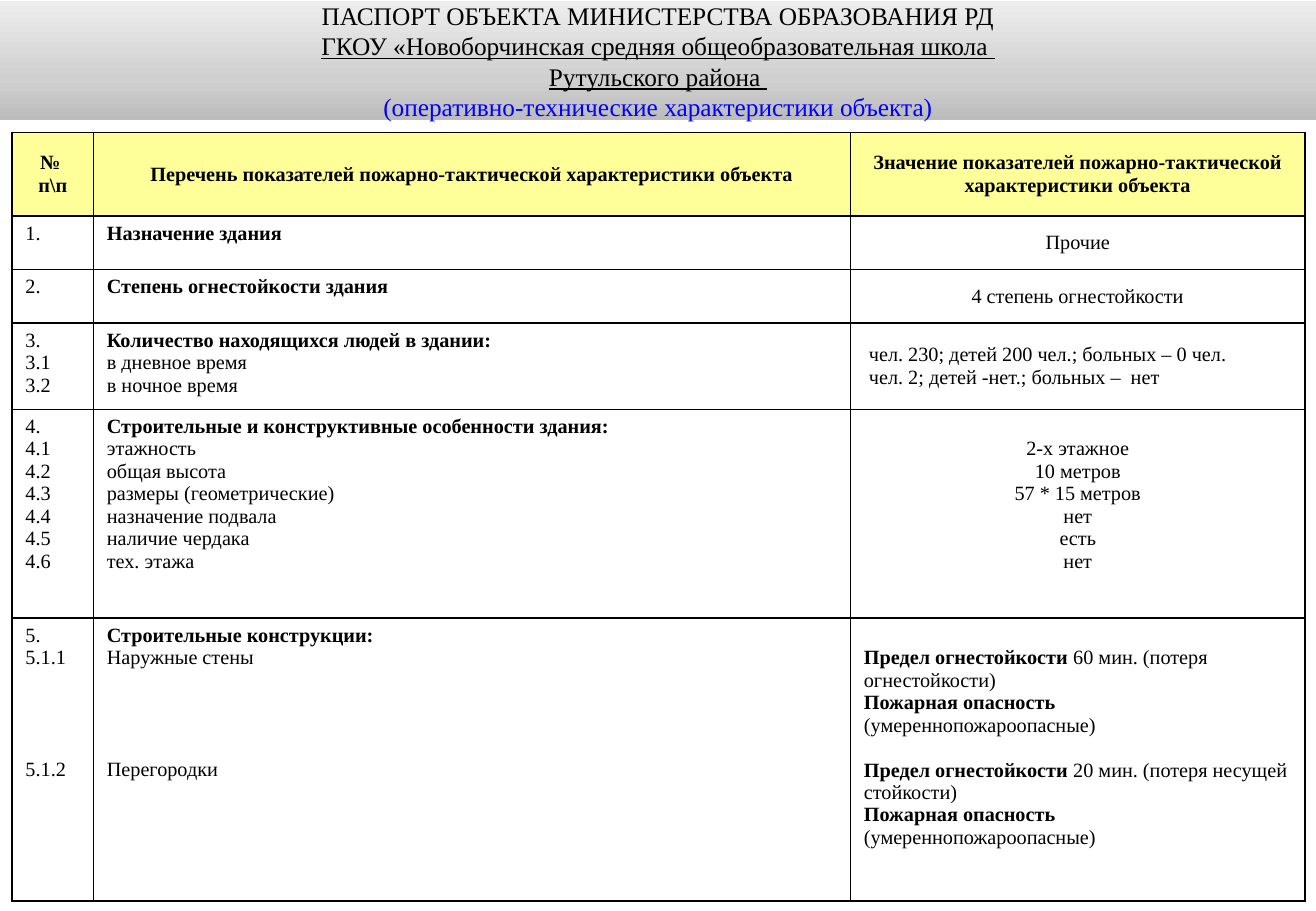
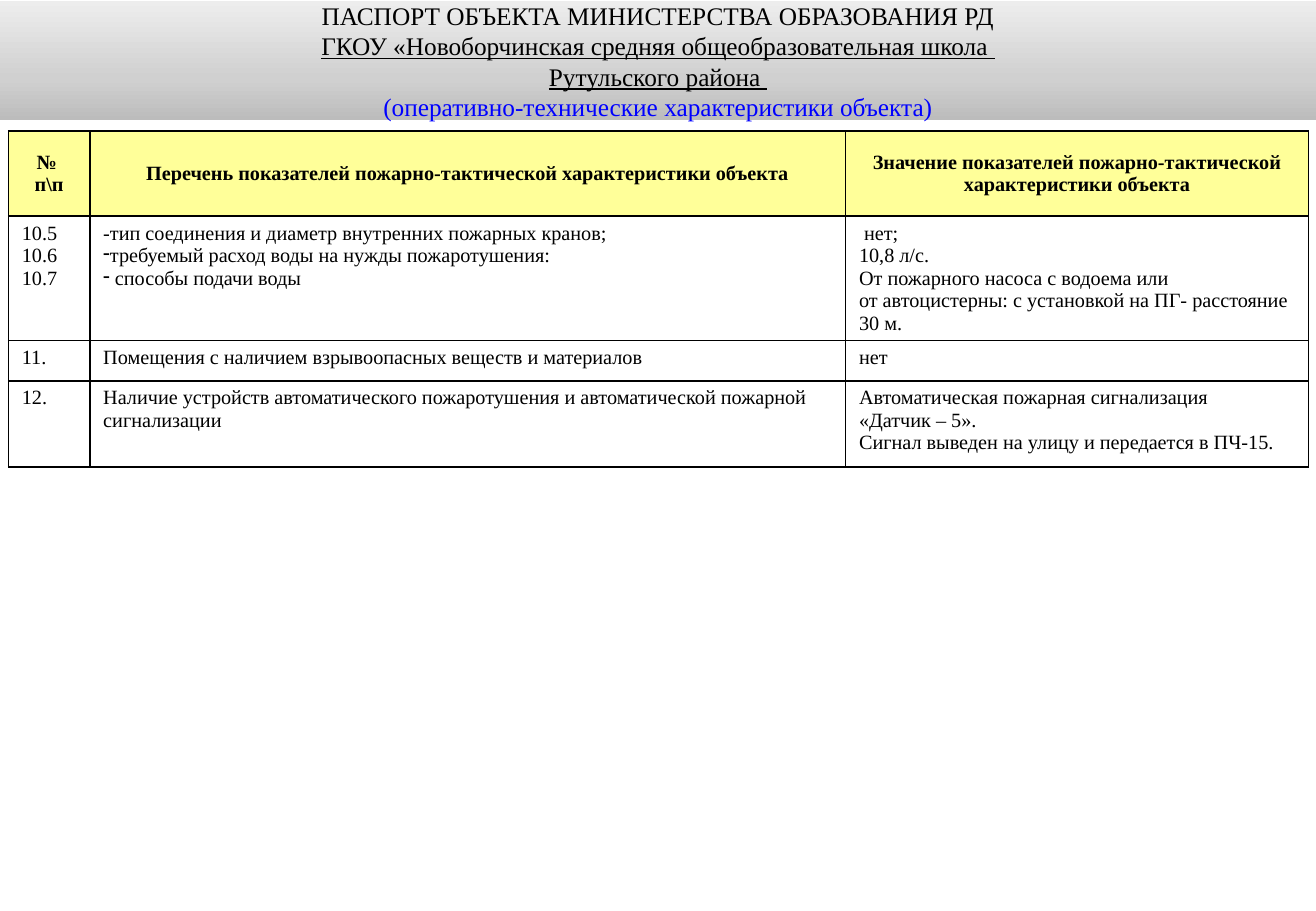
from dataclasses import dataclass
from typing import Any

from lxml import etree
from pptx import Presentation
from pptx import util as u
from pptx.dml import color
from pptx.enum import shapes, text
from pptx.oxml import ns

COLORS = {"text": "000000", "accent": "0000FF", "header": "FFFF99", "body": "FFFFFF", "border": "000000"}
BAND_STOPS = {0: "BCBCBC", 35: "D0D0D0", 100: "EDEDED"}
FONT = "Times New Roman"
TABLE_SIZE, TITLE_SIZE = 12, 15
LINE_HEIGHT = 13.3  # points taken by one line of table text
LEFT, CENTER = text.PP_ALIGN.LEFT, text.PP_ALIGN.CENTER
TOP, MIDDLE = text.MSO_ANCHOR.TOP, text.MSO_ANCHOR.MIDDLE
CELL_MARGINS = {"margin_left": u.Inches(0.11), "margin_right": u.Inches(0.11),
                "margin_top": u.Inches(0.05), "margin_bottom": u.Inches(0.05)}


@dataclass(frozen=True)
class Line:
    body: str = ""
    strong: str = ""  # bold lead-in
    skip: int = 0  # empty line heights above
    bullet: str = ""


@dataclass(frozen=True)
class Cell:
    lines: tuple[Line, ...]
    align: Any = LEFT
    anchor: Any = TOP
    skip: int = 0
    fill: str = "body"


@dataclass(frozen=True)
class Passport:
    left: float
    top: float
    columns: tuple[float, ...]
    heights: tuple[float, ...]
    rows: tuple[tuple[Cell, ...], ...]


def plain(*items: str | Line, **layout: Any) -> Cell:
    return Cell(tuple(Line(i) if isinstance(i, str) else i for i in items), **layout)


def titled(title: str, *items: str | Line) -> Cell:
    return plain(Line(strong=title), *items)


def heading(*items: str) -> Cell:
    return plain(*(Line(strong=i) for i in items), align=CENTER, anchor=MIDDLE, fill="header")


# Content
TITLE = (
    ("ПАСПОРТ ОБЪЕКТА МИНИСТЕРСТВА ОБРАЗОВАНИЯ РД", "text", False),
    ("ГКОУ «Новоборчинская средняя общеобразовательная школа ", "text", True),
    ("Рутульского района ", "text", True),
    ("(оперативно-технические характеристики объекта)", "accent", False),
)
HEADER = (
    heading("№ ", "п\\п"),
    heading("Перечень показателей пожарно-тактической характеристики объекта"),
    heading("Значение показателей пожарно-тактической характеристики объекта"),
)
LIMIT, HAZARD = "Предел огнестойкости ", "Пожарная опасность "
HAZARD_LEVEL = "(умереннопожароопасные)"

BUILDING = Passport(0.1, 1.09, (0.67, 6.23, 3.74), (0.69, 0.44, 0.44, 0.71, 1.72, 2.33), (
    HEADER,
    (plain("1."), titled("Назначение здания"), plain("Прочие", align=CENTER, anchor=MIDDLE)),
    (plain("2."), titled("Степень огнестойкости здания"),
     plain("4 степень огнестойкости", align=CENTER, anchor=MIDDLE)),
    (plain("3.", "3.1", "3.2"),
     titled("Количество находящихся людей в здании:", "в дневное время", "в ночное время"),
     plain(" чел. 230; детей 200 чел.; больных – 0 чел.",
           " чел. 2; детей -нет.; больных –  нет", anchor=MIDDLE)),
    (plain("4.", *(f"4.{n}" for n in range(1, 7))),
     titled("Строительные и конструктивные особенности здания:", "этажность", "общая высота",
            "размеры (геометрические)", "назначение подвала", "наличие чердака", "тех. этажа"),
     plain("2-х этажное", "10 метров", "57 * 15 метров", "нет", "есть", "нет", align=CENTER, skip=1)),
    (plain("5.", "5.1.1", Line("5.1.2", skip=4)),
     titled("Строительные конструкции:", "Наружные стены", Line("Перегородки", skip=4)),
     plain(Line("60 мин. (потеря огнестойкости)", LIMIT), Line(HAZARD_LEVEL, HAZARD),
           Line("20 мин. (потеря несущей стойкости)", LIMIT, skip=1),
           Line(strong=HAZARD.strip()), HAZARD_LEVEL, skip=1)),
))
EXTINGUISHING = Passport(0.07, 1.08, (0.67, 6.22, 3.81), (0.7, 1.02, 0.33, 0.71), (
    HEADER,
    (plain("10.5", "10.6", "10.7"),
     plain("-тип соединения и диаметр внутренних пожарных кранов;",
           Line("требуемый расход воды на нужды пожаротушения:", bullet="-"),
           Line(" способы подачи воды", bullet="-")),
     plain(" нет;", "10,8 л/с.", "От пожарного насоса с водоема или",
           "от автоцистерны: с установкой на ПГ- расстояние 30 м.")),
    (plain("11."), plain("Помещения с наличием взрывоопасных веществ и материалов"), plain("нет")),
    (plain("12."),
     plain("Наличие устройств автоматического пожаротушения и автоматической пожарной сигнализации"),
     plain("Автоматическая пожарная сигнализация", "«Датчик – 5».",
           "Сигнал выведен на улицу и передается в ПЧ-15.")),
))


# Drawing
def add_run(paragraph: Any, words: str, size: float, tint: str = "text", **extra: bool) -> None:
    run = paragraph.add_run()
    run.text = words
    for name, value in {"name": FONT, "size": u.Pt(size), **extra}.items():
        setattr(run.font, name, value)
    run.font.color.rgb = color.RGBColor.from_string(COLORS[tint])


def next_paragraph(frame: Any, index: int, align: Any) -> Any:
    paragraph = frame.add_paragraph() if index else frame.paragraphs[0]
    paragraph.alignment = align
    return paragraph


def solid_fill(parent: Any, hex_color: str) -> None:
    fill = etree.SubElement(parent, ns.qn("a:solidFill"))
    etree.SubElement(fill, ns.qn("a:srgbClr"), val=hex_color)


def draw_borders(cell: Any) -> None:
    properties = cell._tc.get_or_add_tcPr()
    for index, side in enumerate("LRTB"):
        edge = etree.Element(ns.qn(f"a:ln{side}"), w=str(u.Pt(1)))
        solid_fill(edge, COLORS["border"])
        properties.insert(index, edge)


def fill_cell(cell: Any, content: Cell) -> None:
    cell.fill.solid()
    cell.fill.fore_color.rgb = color.RGBColor.from_string(COLORS[content.fill])
    top = CELL_MARGINS["margin_top"] + u.Pt(LINE_HEIGHT * content.skip)
    for name, value in {**CELL_MARGINS, "margin_top": top, "vertical_anchor": content.anchor}.items():
        setattr(cell, name, value)
    draw_borders(cell)
    for index, line in enumerate(content.lines):
        paragraph = next_paragraph(cell.text_frame, index, content.align)
        if line.skip:
            paragraph.space_before = u.Pt(LINE_HEIGHT * line.skip)
        if line.bullet:
            etree.SubElement(paragraph._p.get_or_add_pPr(), ns.qn("a:buChar"), char=line.bullet)
        for words, bold in ((line.strong, True), (line.body, False)):
            if words:
                add_run(paragraph, words, TABLE_SIZE, bold=bold)


def draw_table(slide: Any, passport: Passport) -> None:
    table = slide.shapes.add_table(
        len(passport.rows), len(passport.columns), u.Inches(passport.left), u.Inches(passport.top),
        u.Inches(sum(passport.columns)), u.Inches(sum(passport.heights))).table
    table.first_row = table.horz_banding = False
    for column, width in zip(table.columns, passport.columns):
        column.width = u.Inches(width)
    for row, height, contents in zip(table.rows, passport.heights, passport.rows):
        row.height = u.Inches(height)
        for cell, content in zip(row.cells, contents):
            fill_cell(cell, content)


def draw_title_band(slide: Any) -> None:
    band = slide.shapes.add_shape(shapes.MSO_SHAPE.RECTANGLE, u.Inches(0), u.Inches(0.01),
                                  u.Inches(10.83), u.Inches(0.98))
    band.shadow.inherit = False
    band.line.fill.background()
    # Three-stop gradient, darkest at the bottom
    band.fill.gradient()
    band.fill.gradient_angle = 90
    stops = band._element.spPr.find(f".//{ns.qn('a:gsLst')}")
    for stop in list(stops):
        stops.remove(stop)
    for percent, hex_color in BAND_STOPS.items():
        stop = etree.SubElement(stops, ns.qn("a:gs"), pos=str(percent * 1000))
        etree.SubElement(stop, ns.qn("a:srgbClr"), val=hex_color)
    frame = band.text_frame
    for name, value in {"word_wrap": True, "vertical_anchor": MIDDLE,
                        "margin_left": u.Inches(0.09), "margin_right": u.Inches(0.09),
                        "margin_top": u.Inches(0.05), "margin_bottom": u.Inches(0.05)}.items():
        setattr(frame, name, value)
    for index, (words, tint, underline) in enumerate(TITLE):
        add_run(next_paragraph(frame, index, CENTER), words, TITLE_SIZE, tint, underline=underline)


def main() -> None:
    deck = Presentation()
    deck.slide_width, deck.slide_height = u.Inches(10.83), u.Inches(7.5)
    for passport in (BUILDING, EXTINGUISHING):
        slide = deck.slides.add_slide(deck.slide_layouts[6])
        draw_table(slide, passport)
        draw_title_band(slide)
    deck.save("out.pptx")


if __name__ == "__main__":
    main()
